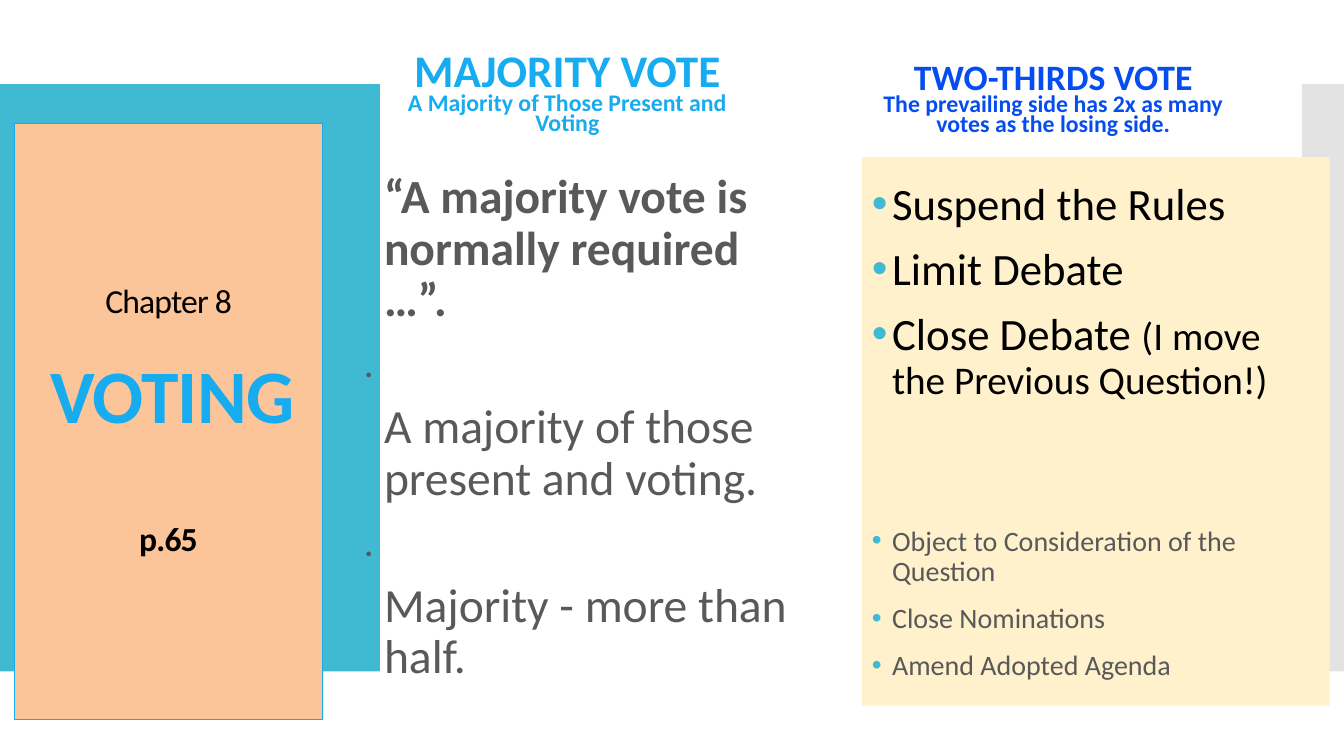
"""Build the slide on majority and two-thirds votes."""
from lxml import etree
from pptx import Presentation
from pptx.dml.color import RGBColor
from pptx.enum.shapes import MSO_SHAPE
from pptx.enum.text import MSO_ANCHOR, MSO_AUTO_SIZE, PP_ALIGN
from pptx.oxml.ns import qn
from pptx.util import Pt

RECT = MSO_SHAPE.RECTANGLE
MIDDLE, BOTTOM = MSO_ANCHOR.MIDDLE, MSO_ANCHOR.BOTTOM
LEFT, CENTER = PP_ALIGN.LEFT, PP_ALIGN.CENTER
NO_FIT = MSO_AUTO_SIZE.NONE

TEAL = RGBColor(0x40, 0xBA, 0xD2)
SILVER = RGBColor(0xC8, 0xC8, 0xC8)
PEACH = RGBColor(0xFC, 0xC5, 0x99)
CREAM = RGBColor(0xFF, 0xF1, 0xCB)
SKY = RGBColor(0x17, 0xAB, 0xF0)
BLUE = RGBColor(0x06, 0x4D, 0xF0)
GRAY = RGBColor(0x59, 0x59, 0x59)
BLACK = RGBColor(0, 0, 0)
INDENT = Pt(14.4)


def place(shape, box, anchor):
    """Move a placeholder and return its text frame."""
    for name, value in zip(("left", "top", "width", "height"), box):
        setattr(shape, name, Pt(value))
    frame = shape.text_frame
    form = {"word_wrap": True, "auto_size": NO_FIT, "vertical_anchor": anchor}
    for name, value in form.items():
        setattr(frame, name, value)
    return frame


def write(frame, runs, color, before=0, align=LEFT, lines=0.9, dot=False, margin=0):
    """Add a paragraph of (text, size, bold) runs."""
    first = frame.paragraphs[0]
    par = frame.add_paragraph() if first.runs else first
    props = par._p.get_or_add_pPr()
    props.set("marL", str(INDENT if dot else Pt(margin)))
    props.set("indent", str(-INDENT if dot else 0))
    if dot:
        tint = etree.SubElement(props, qn("a:buClr"))
        etree.SubElement(tint, qn("a:srgbClr"), val=str(TEAL))
        etree.SubElement(props, qn("a:buFont"), typeface="Arial")
        etree.SubElement(props, qn("a:buChar"), char="•")
    else:
        etree.SubElement(props, qn("a:buNone"))
    form = {"alignment": align, "line_spacing": lines,
            "space_before": Pt(before), "space_after": Pt(0)}
    for name, value in form.items():
        setattr(par, name, value)
    for text, size, bold in runs:
        run = par.add_run()
        run.text = text
        for name, value in {"name": "Calibri", "size": Pt(size), "bold": bold}.items():
            setattr(run.font, name, value)
        run.font.color.rgb = color
    return par


deck = Presentation()
deck.slide_width, deck.slide_height = Pt(960), Pt(540)
slide = deck.slides.add_slide(deck.slide_layouts[4])
title, *bodies = slide.placeholders
tree = slide.shapes._spTree

for spot, (left, width, color) in enumerate([(0, 271.4, TEAL), (930, 30, SILVER)], 2):
    band = slide.shapes.add_shape(RECT, Pt(left), Pt(60), Pt(width), Pt(419.5))
    band.shadow.inherit = False
    band.fill.solid()
    band.fill.fore_color.rgb = color
    band.line.fill.background()
    tree.insert(spot, band._element)
    if color == SILVER:
        tint = band._element.spPr.find(qn("a:solidFill"))[0]
        etree.SubElement(tint, qn("a:alpha"), val="50000")

frame = place(title, (10.2, 88.5, 220.3, 425.7), MIDDLE)
title.fill.solid()
title.fill.fore_color.rgb = PEACH
title.line.color.rgb = SKY
title.line.width = Pt(0.75)
for text, size, bold, color, before, margin in [
    ("Chapter 8", 24, False, BLACK, 0, 0),
    ("VOTING", 54, True, SKY, 26.4, 5.4),
    ("p.65", 24, True, BLACK, 59.3, 0),
]:
    par = write(frame, [(text, size, bold)], color, before, CENTER, margin=margin)
    par.runs[0]._r.get_or_add_rPr().set("spc", "-60")

heads = [
    (bodies[0], (268.5, 26, 273.6, 74.1), SKY, "MAJORITY VOTE", 32.3,
     "A Majority of Those Present and Voting"),
    (bodies[2], (615.6, 38.2, 273.6, 62.6), BLUE, "TWO-THIRDS VOTE", 25.5,
     "The prevailing side has 2x as many votes as the losing side."),
]
for shape, box, color, head, size, note in heads:
    frame = place(shape, box, BOTTOM)
    for text, points in ((head, size), (note, 17)):
        write(frame, [(text, points, True)], color, 0, CENTER, 0.7)

frame = place(bodies[1], (252.7, 110.2, 323.3, 391.7), MIDDLE)
for spot, (text, size) in enumerate([
    ("“A majority vote is normally required …”.", 34),
    (".", 28),
    ("A majority of those present and voting.", 34),
    (".", 28),
    ("Majority - more than half.", 34),
]):
    write(frame, [(text, size, spot == 0)], GRAY, 12 if spot else 0, dot=text != ".")

frame = place(bodies[3], (615.6, 112.3, 334.1, 391.7), MIDDLE)
bodies[3].fill.solid()
bodies[3].fill.fore_color.rgb = CREAM
for runs, color, before in [
    ([("Suspend the Rules", 32, False)], BLACK, 0),
    ([("Limit Debate", 32, False)], BLACK, 12),
    ([("Close Debate ", 32, False),
      ("(I move the Previous Question!)", 28, False)], BLACK, 12),
    ([("Object to Consideration of the Question", 20, False)], GRAY, 88.8),
    ([("Close Nominations", 20, False)], GRAY, 12),
    ([("Amend Adopted Agenda", 20, False)], GRAY, 12),
]:
    write(frame, runs, color, before, dot=True)

deck.save("out.pptx")
